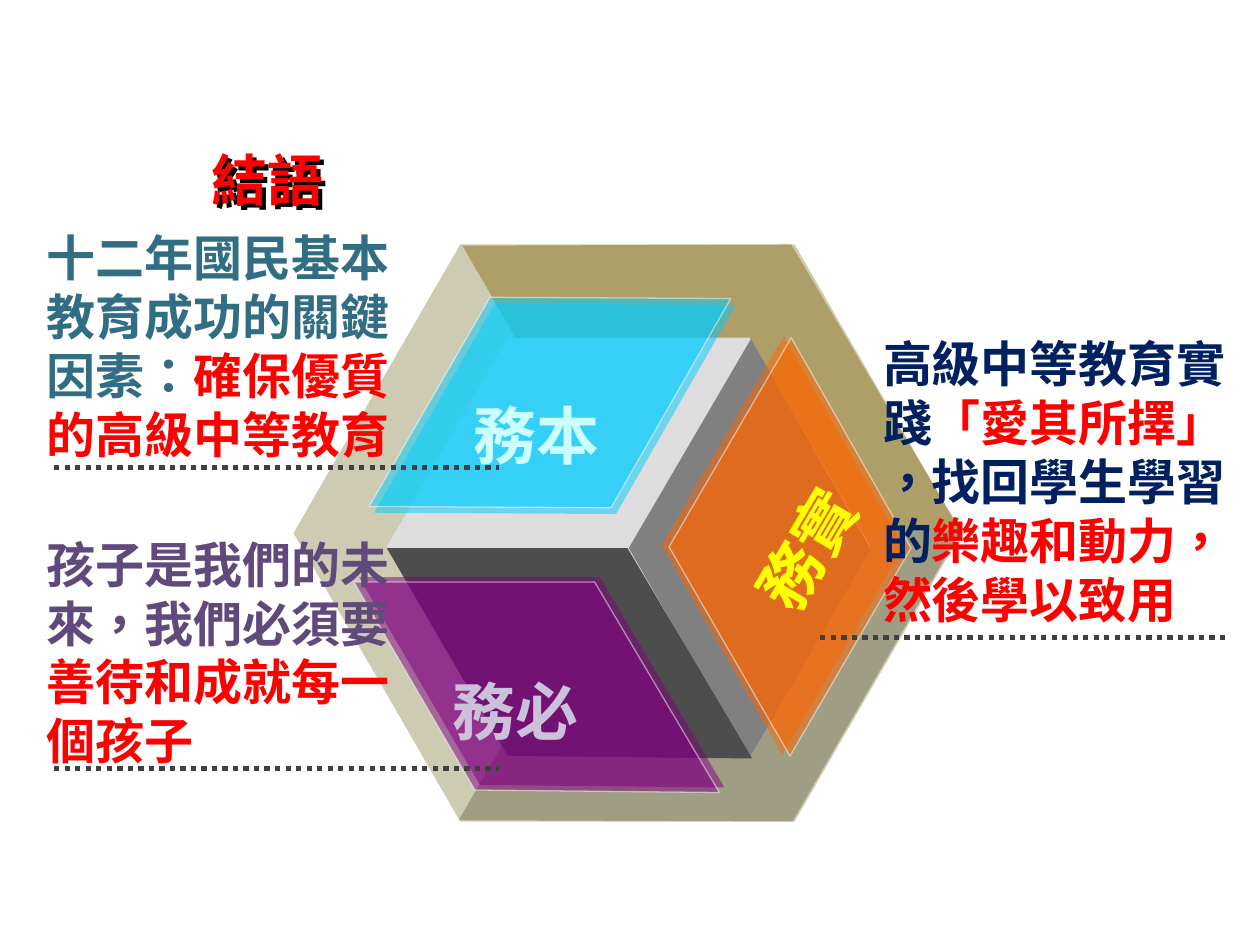
"""Build the closing slide: a cube of three principles with three conclusions."""
from lxml import etree
from pptx import Presentation
from pptx import util as u
from pptx.dml.color import RGBColor
from pptx.enum import dml, shapes, text
from pptx.oxml import ns

T = {
    "font": "Noto Sans CJK SC", "title": 32, "body": 28, "label": 36,
    "red": "FF0000", "teal": "316E83", "violet": "604A7B", "navy": "002060",
    "yellow": "FFFF00", "lilac": "CCC1DA", "ice": "CCFFFF", "white": "FFFFFF",
    "brown": "996600", "black": "000000", "olive": "838143", "light": "DDDDDD",
    "grey": "808080", "dark": "4D4D4D", "orange": "FF6600", "purple": "800080",
    "cyan": "00CCFF", "rule": "404040",
}


def paint(fill, color, alpha):
    fill.solid()
    fill.fore_color.rgb = RGBColor.from_string(T[color])
    clr = fill._xPr.find(".//" + ns.qn("a:srgbClr"))
    if alpha < 100:
        etree.SubElement(clr, ns.qn("a:alpha"), val=str(alpha * 1000))


def add_text(box, size, spans, wrap=True):
    sp = s.shapes.add_textbox(*map(u.Inches, box))
    tf = sp.text_frame
    tf.word_wrap = wrap
    p = tf.paragraphs[0]
    for words, color in spans:
        if words == "\n":
            p.add_line_break()
            continue
        r = p.add_run()
        r.text = words
        r.font.size = u.Pt(T[size])
        r.font.bold = True
        r.font.name = T["font"]
        r.font.color.rgb = RGBColor.from_string(T[color])
        r.font._element.set("lang", "zh-TW")
        etree.SubElement(r.font._element, ns.qn("a:ea"), typeface=T["font"])
    return sp


prs = Presentation()
prs.slide_width, prs.slide_height = u.Inches(10), u.Inches(7.5)
s = prs.slides.add_slide(prs.slide_layouts[6])

back_top = [(3.67, 1.95), (6.28, 1.94), (7.63, 4.22), (4.98, 4.21)]
back_bottom = [(3.64, 6.51), (6.29, 6.52), (7.62, 4.22), (4.97, 4.21)]
right = [(5.96, 2.69), (4.99, 4.35), (5.95, 6.01), (6.91, 4.36)]
bottom = [(3.07, 4.35), (4.98, 4.35), (5.97, 6.02), (4.03, 6)]
top = [(2.97, 4.07), (4.89, 4.08), (5.84, 2.42), (3.93, 2.41)]
faces = [
    (back_top, 0, 0, "brown", 50, False),
    (back_bottom, 0, 0, "black", 30, False),
    ((2.33, 1.94, 5.3, 4.58), 0, 0, "olive", 40, False),
    ((3.07, 2.68, 3.84, 3.32), 0, 0, "light", 100, False),
    (right, 0, 0, "grey", 100, False),
    (bottom, 0, 0, "dark", 100, False),
    (right, 0.26, -0.02, "orange", 50, False),
    (bottom, -0.22, 0.23, "purple", 50, False),
    (top, 0, 0, "cyan", 50, False),
    (bottom, -0.26, 0.27, "purple", 50, True),
    (right, 0.32, -0.01, "orange", 50, True),
    (top, -0.04, -0.05, "cyan", 50, True),
]
for outline, dx, dy, color, alpha, edged in faces:
    if isinstance(outline, tuple):
        sp = s.shapes.add_shape(shapes.MSO_SHAPE.HEXAGON, *map(u.Inches, outline))
        sp.adjustments[0], sp.adjustments[1] = 0.289, 1.155
    else:
        pts = [(u.Inches(x + dx), u.Inches(y + dy)) for x, y in outline]
        fb = s.shapes.build_freeform(*pts[0])
        fb.add_line_segments(pts[1:], close=True)
        sp = fb.convert_to_shape()
    sp.shadow.inherit = False
    paint(sp.fill, color, alpha)
    if edged:
        sp.line.width = u.Pt(0.75)
        paint(sp.line.fill, "white", 50)
    else:
        sp.line.fill.background()

for x1, x2, y in [(6.51, 9.73, 5.06), (0.43, 3.96, 3.71), (0.43, 3.96, 6.1)]:
    ends = map(u.Inches, (x1, y, x2, y))
    rule = s.shapes.add_connector(shapes.MSO_CONNECTOR.STRAIGHT, *ends)
    rule.line.width = u.Pt(3)
    paint(rule.line.fill, "rule", 100)
    rule.line.dash_style = dml.MSO_LINE.ROUND_DOT
    etree.SubElement(rule._element.spPr, ns.qn("a:effectLst"))

title = add_text((1.58, 0.88, 7.19, 1.15), "title", [("結語", "red")])
title.text_frame.vertical_anchor = text.MSO_ANCHOR.MIDDLE
title.text_frame.paragraphs[0].line_spacing = 0.9
effects = etree.SubElement(title._element.spPr, ns.qn("a:effectLst"))
shadow = etree.SubElement(effects, ns.qn("a:outerShdw"), dist="38100", dir="2700000")
etree.SubElement(shadow, ns.qn("a:srgbClr"), val=T["black"])

for box, angle, words, color in [
    ((5.64, 4.1, 1.19, 0.32), 300.6, "務實", "yellow"),
    ((3.49, 5.29, 1.5, 0.32), 0, "務必", "lilac"),
    ((3.66, 3.1, 1.42, 0.32), 0, "務本", "ice"),
]:
    sp = add_text(box, "label", [(words, color)], wrap=False)
    sp.text_frame.margin_right = 0
    sp.rotation = angle

add_text((0.27, 1.76, 2.95, 1.99), "body", [
    ("十二年國民基本教育成功的關鍵因素：", "teal"),
    ("確保優質的高級中等教育", "red")])
add_text((0.27, 4.19, 2.95, 1.99), "body", [
    ("孩子是我們的未來，我們必須要", "violet"),
    ("善待和成就每一個孩子", "red")])
add_text((6.91, 2.6, 2.95, 2.46), "body", [
    ("高級中等教育實踐", "navy"), ("「愛其所擇」", "red"), ("\n", "red"),
    ("，找回學生學習的", "navy"), ("樂趣和動力，然後學以致用", "red")])

prs.save("out.pptx")
